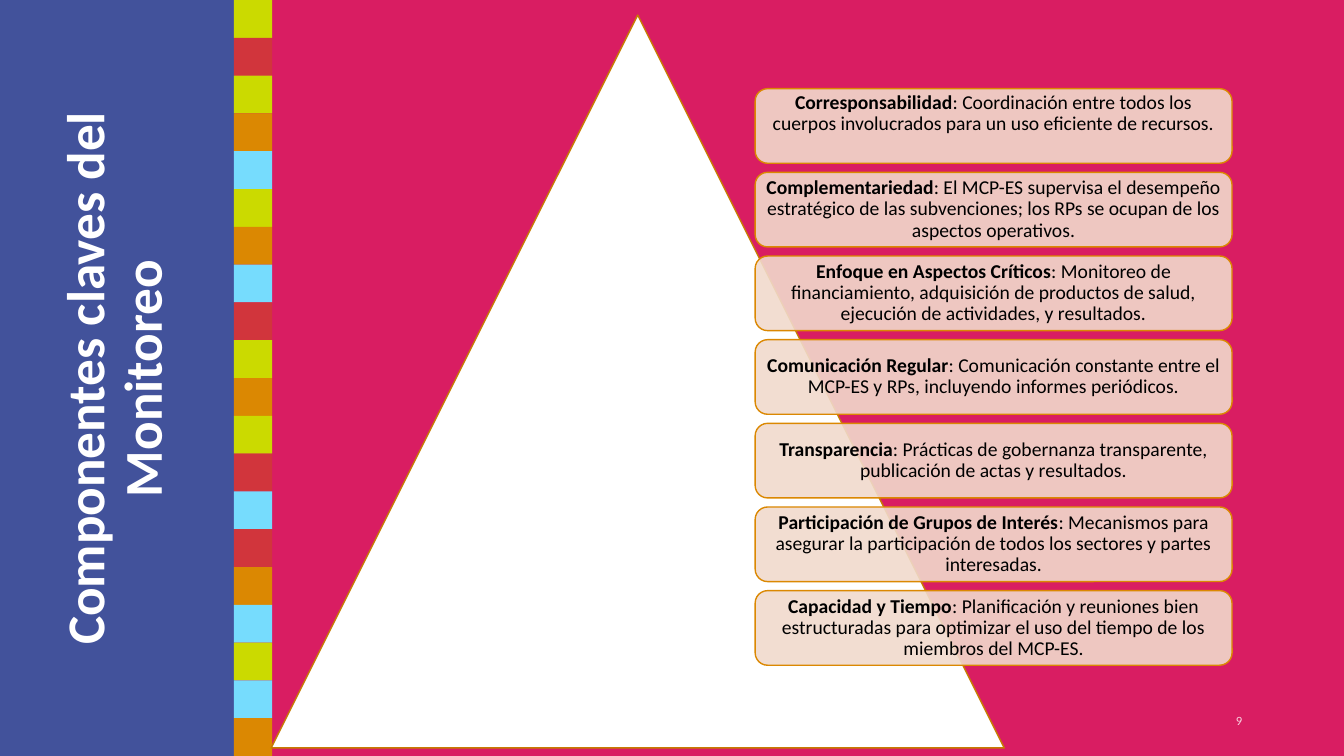
from lxml import etree
from pptx import Presentation
from pptx.dml.color import RGBColor
from pptx.enum.shapes import MSO_SHAPE as Shape
from pptx.enum.text import MSO_ANCHOR as Anchor, MSO_AUTO_SIZE as AutoSize, PP_ALIGN as Align
from pptx.oxml.ns import qn
from pptx.util import Inches, Pt

LIME, RED, ORANGE, SKY = "CBDA00", "D1353C", "DB8802", "76DCFD"
TILES = [LIME, RED, LIME, ORANGE, SKY, LIME, ORANGE, SKY, RED, LIME,
         ORANGE, LIME, RED, SKY, RED, ORANGE, SKY, LIME, SKY, ORANGE]
COMPONENTS = [
    ("Corresponsabilidad", "Coordinación entre todos los cuerpos involucrados para un uso eficiente de recursos."),
    ("Complementariedad", "El MCP-ES supervisa el desempeño estratégico de las subvenciones; los RPs se ocupan de los aspectos operativos."),
    ("Enfoque en Aspectos Críticos", "Monitoreo de financiamiento, adquisición de productos de salud, ejecución de actividades, y resultados."),
    ("Comunicación Regular", "Comunicación constante entre el MCP-ES y RPs, incluyendo informes periódicos."),
    ("Transparencia", "Prácticas de gobernanza transparente, publicación de actas y resultados."),
    ("Participación de Grupos de Interés", "Mecanismos para asegurar la participación de todos los sectores y partes interesadas."),
    ("Capacidad y Tiempo", "Planificación y reuniones bien estructuradas para optimizar el uso del tiempo de los miembros del MCP-ES."),
]


def add_block(kind, left, top, width, height, fill, line=None):
    block = page.shapes.add_shape(kind, Inches(left), Inches(top), Inches(width), Inches(height))
    block.shadow.inherit = False
    block.fill.solid()
    block.fill.fore_color.rgb = RGBColor.from_string(fill)
    if line:
        block.line.color.rgb = RGBColor.from_string(line)
        block.line.width = Pt(1)
    else:
        block.line.fill.background()
    return block


def add_span(para, text, size, color, bold=False):
    span = para.add_run()
    span.text = text
    span.font.color.rgb = RGBColor.from_string(color)
    for name, value in {"name": "Calibri", "size": Pt(size), "bold": bold}.items():
        setattr(span.font, name, value)


deck = Presentation()
deck.slide_width, deck.slide_height = Inches(13.33), Inches(7.5)
page = deck.slides.add_slide(deck.slide_layouts[5])
page.background.fill.solid()
page.background.fill.fore_color.rgb = RGBColor.from_string("D91D62")

# Side band and column of coloured tiles
add_block(Shape.RECTANGLE, 0, 0, 2.33, 7.5, "42529B")
tile_height = 7.5 / len(TILES)
for index, color in enumerate(TILES):
    add_block(Shape.RECTANGLE, 2.32, index * tile_height, 0.38, tile_height, color)

# Rotated title, raised above the band
title = page.shapes.title
place = {"left": Inches(-2.6), "top": Inches(3.03), "width": Inches(7.5),
         "height": Inches(1.45), "rotation": 270}
for name, value in place.items():
    setattr(title, name, value)
frame = title.text_frame
for name, value in {"word_wrap": True, "auto_size": AutoSize.NONE, "vertical_anchor": Anchor.MIDDLE}.items():
    setattr(frame, name, value)
para = frame.paragraphs[0]
para.alignment, para.line_spacing = Align.CENTER, 0.9
add_span(para, "Componentes claves del Monitoreo", 38, "FFFFFF", True)
title.element.getparent().append(title.element)

# Slide number
box = page.shapes.add_textbox(Inches(9.42), Inches(6.95), Inches(3), Inches(0.4))
box.text_frame.word_wrap = True
box.text_frame.vertical_anchor = Anchor.MIDDLE
para = box.text_frame.paragraphs[0]
para.alignment = Align.RIGHT
add_span(para, "9", 9, "F9D0DF")

# Pyramid
add_block(Shape.ISOSCELES_TRIANGLE, 2.69, 0.15, 7.27, 7.27, "FFFFFF", "C77B02")

# Component cards; the first one keeps its text at the top
for index, (heading, detail) in enumerate(COMPONENTS):
    card = add_block(Shape.ROUNDED_RECTANGLE, 7.49, 0.88 + index * 0.83, 4.73, 0.74, "F1DACC", ORANGE)
    fill_color = card.element.spPr.find(qn("a:solidFill"))[0]
    etree.SubElement(fill_color, qn("a:alpha"), val="90000")
    frame = card.text_frame
    layout = {"word_wrap": True, "vertical_anchor": Anchor.MIDDLE if index else Anchor.TOP,
              "margin_left": Inches(0.06), "margin_right": Inches(0.06),
              "margin_top": 0, "margin_bottom": 0}
    for name, value in layout.items():
        setattr(frame, name, value)
    para = frame.paragraphs[0]
    para.alignment, para.line_spacing = Align.CENTER, 0.9
    add_span(para, heading, 14, "000000", True)
    add_span(para, f": {detail}", 14, "000000")

deck.save("out.pptx")
